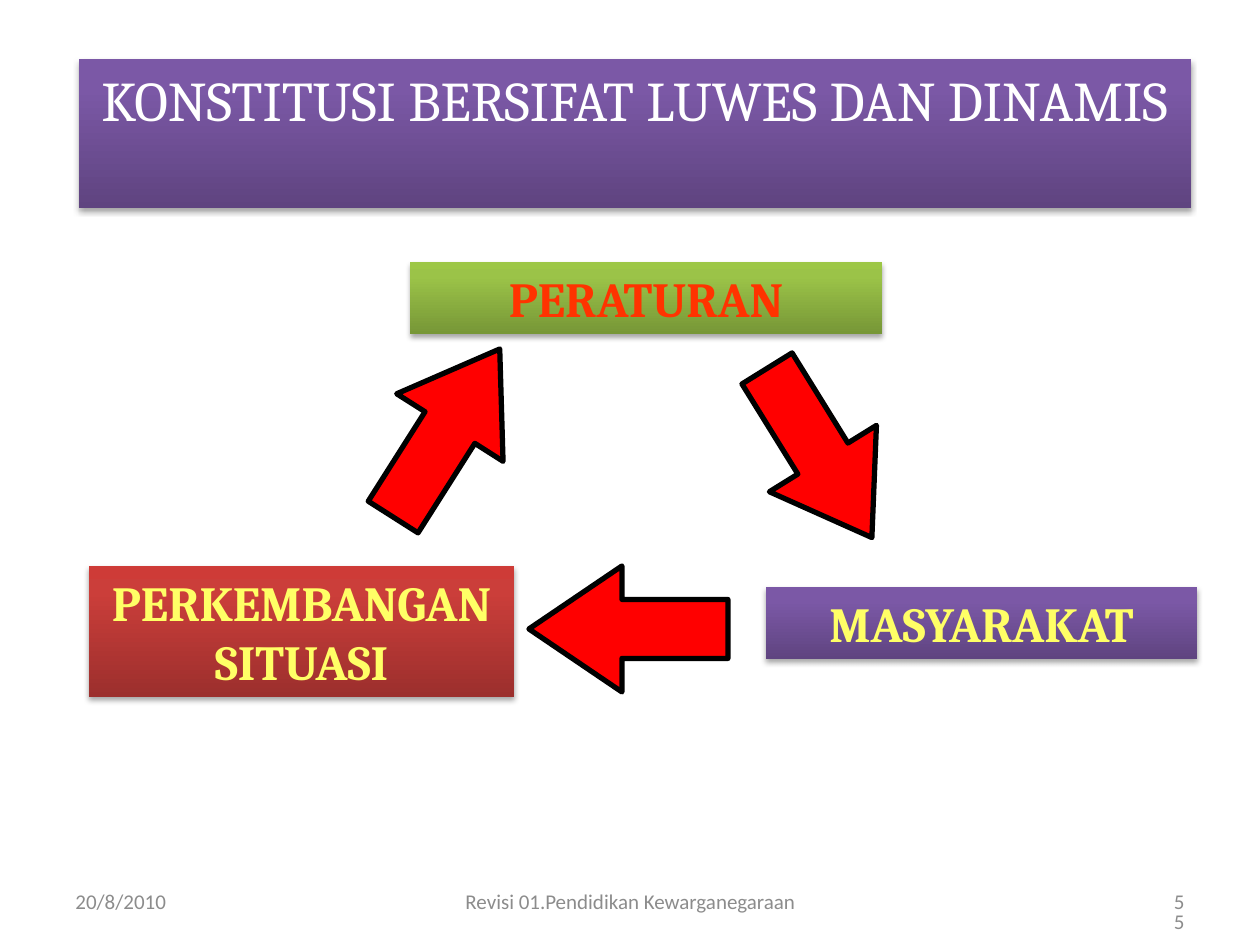
from copy import deepcopy

from lxml.etree import SubElement
from pptx import Presentation
from pptx.dml.color import RGBColor
from pptx.enum.shapes import MSO_SHAPE
from pptx.enum.text import MSO_ANCHOR, MSO_AUTO_SIZE, PP_ALIGN
from pptx.oxml.ns import qn
from pptx.util import Emu, Pt

PX = 914400 // 126

WHITE = RGBColor(0xFF, 0xFF, 0xFF)
BLACK = RGBColor(0, 0, 0)
RED = RGBColor(0xFF, 0, 0)
ORANGE = RGBColor(0xFF, 0x33, 0)
YELLOW = RGBColor(0xFF, 0xFF, 0x66)
GREY = RGBColor(0x8C, 0x8C, 0x8C)
PURPLES = (RGBColor(0x5F, 0x44, 0x80), RGBColor(0x7B, 0x58, 0xA6), RGBColor(0x7C, 0x57, 0xA8))
GREENS = (RGBColor(0x77, 0x97, 0x37), RGBColor(0x9B, 0xC3, 0x48), RGBColor(0x9D, 0xC7, 0x46))
REDS = (RGBColor(0x9C, 0x2F, 0x2D), RGBColor(0xCB, 0x3E, 0x3A), RGBColor(0xCE, 0x3B, 0x37))


def px(*lengths):
    return [Emu(length * PX) for length in lengths]


def write(shape, text, font_name, size, color, align, anchor, bold=False):
    frame = shape.text_frame
    frame.text = text
    frame.word_wrap = True
    frame.auto_size = MSO_AUTO_SIZE.NONE
    frame.vertical_anchor = anchor
    paragraph = frame.paragraphs[0]
    paragraph.alignment = align
    font = paragraph.font
    font.name, font.size, font.bold = font_name, Pt(size), bold
    font.color.rgb = color


def paint_panel(shape, colors):
    """Fill with a gradient rising from dark to light, over a soft shadow."""
    shape.fill.gradient()
    shape.fill.gradient_angle = 90
    properties = shape._element.spPr
    stops = properties.find(".//" + qn("a:gsLst"))
    stops.insert(1, deepcopy(stops[0]))
    for stop, position, color in zip(shape.fill.gradient_stops, (0, 0.8, 1), colors):
        stop.position = position
        stop.color.rgb = color
    shape.line.fill.background()

    shape.shadow.inherit = False
    shadow = SubElement(properties.find(qn("a:effectLst")), qn("a:outerShdw"),
                        blurRad="40000", dist="23000", dir="5400000", rotWithShape="0")
    shadow_color = SubElement(shadow, qn("a:srgbClr"), val="000000")
    SubElement(shadow_color, qn("a:alpha"), val="35000")


def add_heading(slide, box):
    heading = slide.shapes.title
    heading.left, heading.top, heading.width, heading.height = px(*box)
    paint_panel(heading, PURPLES)
    write(heading, "KONSTITUSI BERSIFAT LUWES DAN DINAMIS", "Cambria", 32, WHITE,
          PP_ALIGN.CENTER, MSO_ANCHOR.TOP)


def add_stage(slide, box, text, colors, text_color):
    stage = slide.shapes.add_shape(MSO_SHAPE.RECTANGLE, *px(*box))
    paint_panel(stage, colors)
    write(stage, text, "Cambria", 28, text_color, PP_ALIGN.CENTER, MSO_ANCHOR.TOP, bold=True)


def add_cycle_arrow(slide, left, top, rotation):
    """Add a left-pointing arrow, turned clockwise by rotation."""
    arrow = slide.shapes.add_shape(MSO_SHAPE.RIGHT_ARROW, *px(left, top, 199, 126))
    arrow._element.spPr.find(qn("a:xfrm")).set("flipH", "1")
    arrow.rotation = rotation
    arrow.adjustments[0], arrow.adjustments[1] = 0.468, 0.738
    arrow.shadow.inherit = False
    arrow.fill.solid()
    arrow.fill.fore_color.rgb = RED
    arrow.line.color.rgb = BLACK
    arrow.line.width = Pt(3)


def add_cycle(slide, left, top):
    stages = (
        ((321, 0, 472, 72), "PERATURAN", GREENS, ORANGE),
        ((677, 325, 431, 72), "MASYARAKAT", PURPLES, YELLOW),
        ((0, 304, 425, 131), "PERKEMBANGAN SITUASI", REDS, YELLOW),
    )
    for (x, y, width, height), text, colors, text_color in stages:
        add_stage(slide, (left + x, top + y, width, height), text, colors, text_color)
    for x, y, rotation in ((440, 304, 0), (258, 108, 122.4), (631, 128, 238.2)):
        add_cycle_arrow(slide, left + x, top + y, rotation)


def add_footer(slide, left, top):
    entries = (
        (0, 0, 294, "20/8/2010", PP_ALIGN.LEFT),
        (368, 0, 399, "Revisi 01.Pendidikan Kewarganegaraan", PP_ALIGN.CENTER),
        (840, 0, 294, "5", PP_ALIGN.RIGHT),
        (840, 20, 294, "5", PP_ALIGN.RIGHT),
    )
    for x, y, width, text, align in entries:
        entry = slide.shapes.add_textbox(*px(left + x, top + y, width, 50))
        write(entry, text, "Calibri", 12, GREY, align, MSO_ANCHOR.MIDDLE)


def main():
    deck = Presentation()
    deck.slide_width, deck.slide_height = px(1260, 945)
    slide = deck.slides.add_slide(deck.slide_layouts[5])
    add_heading(slide, (79, 59, 1112, 149))
    add_cycle(slide, 89, 262)
    add_footer(slide, 63, 876)
    deck.save("out.pptx")


if __name__ == "__main__":
    main()
